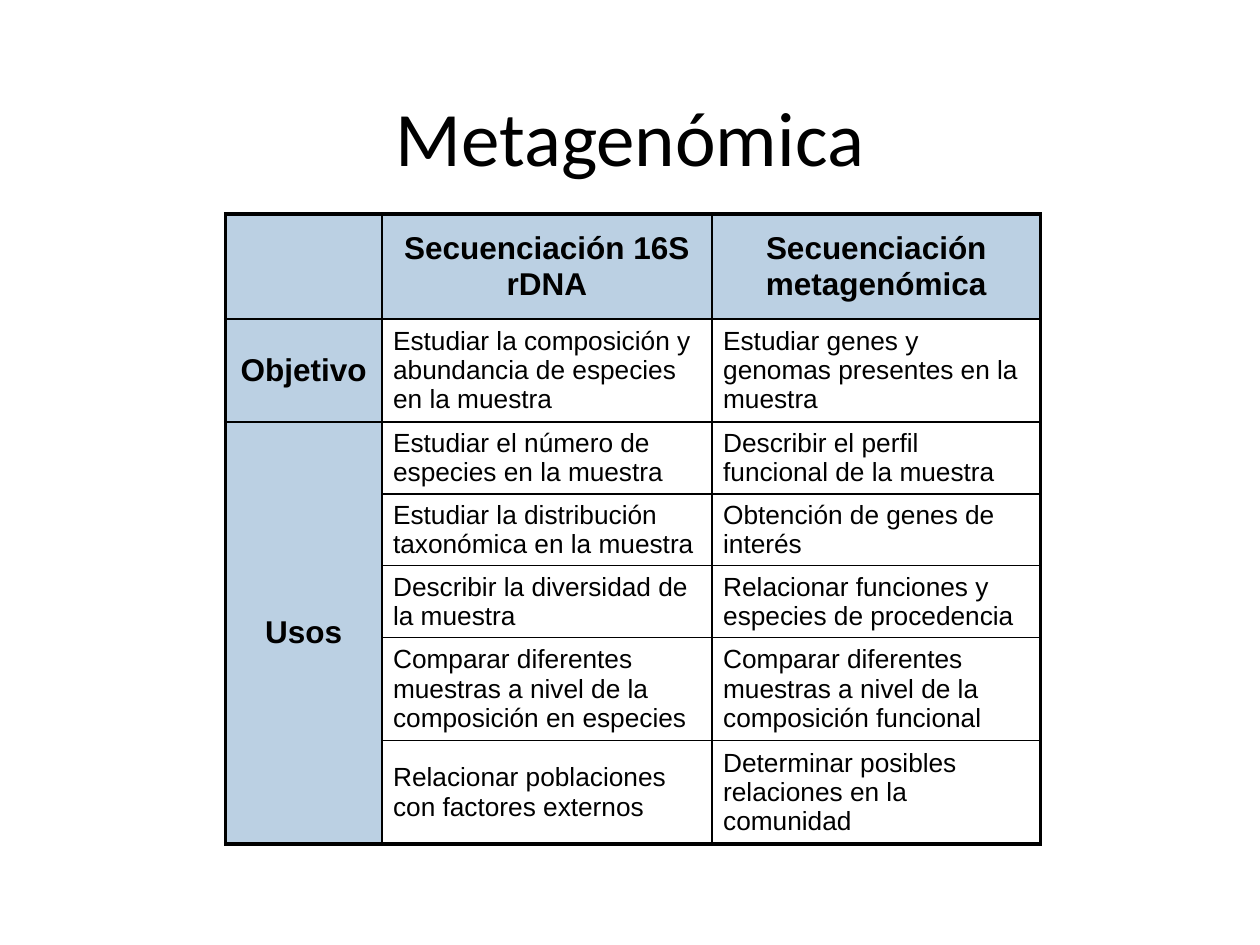
from lxml import etree
from pptx import Presentation
from pptx.dml.color import RGBColor
from pptx.enum.text import MSO_ANCHOR, PP_ALIGN
from pptx.oxml.ns import qn
from pptx.util import Inches, Pt

MIDDLE = MSO_ANCHOR.MIDDLE
CENTER, LEFT = PP_ALIGN.CENTER, PP_ALIGN.LEFT
BLACK, WHITE, BLUE = "000000", "FFFFFF", "BBD0E3"
THIN, THICK = 1, 2.25
COLS = [1.24, 2.62, 2.61]
ROWS = [0.83, 0.82, 0.57, 0.57, 0.57, 0.82, 0.82]
USES = 2  # first row of the merged "Usos" cell
CELLS = [
    ["", "Secuenciación 16S rDNA", "Secuenciación metagenómica"],
    ["Objetivo", "Estudiar la composición y abundancia de especies en la muestra",
     "Estudiar genes y genomas presentes en la muestra"],
    ["Usos", "Estudiar el número de especies en la muestra",
     "Describir el perfil funcional de la muestra"],
    ["", "Estudiar la distribución taxonómica en la muestra",
     "Obtención de genes de interés"],
    ["", "Describir la diversidad de la muestra",
     "Relacionar funciones y especies de procedencia"],
    ["", "Comparar diferentes muestras a nivel de la composición en especies",
     "Comparar diferentes muestras a nivel de la composición funcional"],
    ["", "Relacionar poblaciones con factores externos",
     "Determinar posibles relaciones en la comunidad"],
]


def color(code):
    return RGBColor.from_string(code)


def add_run(para, text, font, size, bold=False):
    run = para.add_run()
    run.text = text
    run.font.name = font
    run.font.size = Pt(size)
    run.font.bold = bold
    run.font.color.rgb = color(BLACK)


def set_edges(cell, widths):
    """Draw the borders, given as a dict of side letter to points."""
    props = cell._tc.get_or_add_tcPr()
    for place, side in enumerate("LRTB"):
        line = etree.Element(qn("a:ln" + side), w=str(Pt(widths[side])))
        fill = etree.SubElement(line, qn("a:solidFill"))
        etree.SubElement(fill, qn("a:srgbClr"), val=BLACK)
        props.insert(place, line)


def add_title(slide, left, top, width, height):
    title = slide.shapes.title
    title.left, title.top = Inches(left), Inches(top)
    title.width, title.height = Inches(width), Inches(height)
    frame = title.text_frame
    frame.vertical_anchor = MIDDLE
    para = frame.paragraphs[0]
    para.alignment = CENTER
    add_run(para, "Metagenómica", "Calibri", 44)


def fill_cell(cell, text, head):
    cell.fill.solid()
    cell.fill.fore_color.rgb = color(BLUE if head else WHITE)
    cell.vertical_anchor = MIDDLE
    cell.margin_left = cell.margin_right = Inches(0.09)
    cell.margin_top = cell.margin_bottom = Inches(0.05)
    para = cell.text_frame.paragraphs[0]
    para.alignment = CENTER if head else LEFT
    if text:
        add_run(para, text, "Arial", 18 if head else 15, head)


def add_grid(slide, left, top, width, height):
    frame = slide.shapes.add_table(len(ROWS), len(COLS), Inches(left),
                                   Inches(top), Inches(width), Inches(height))
    table = frame.table
    table.first_row = table.horz_banding = False
    for col, size in zip(table.columns, COLS):
        col.width = Inches(size)
    for row, size in zip(table.rows, ROWS):
        row.height = Inches(size)
    last_row, last_col = len(ROWS) - 1, len(COLS) - 1
    table.cell(USES, 0).merge(table.cell(last_row, 0))
    for r, texts in enumerate(CELLS):
        for c, text in enumerate(texts):
            cell = table.cell(r, c)
            fill_cell(cell, text, r == 0 or c == 0)
            end = r + cell.span_height - 1 if cell.is_merge_origin else r
            outer = {"L": c == 0, "R": c == last_col,
                     "T": r == 0, "B": end == last_row}
            set_edges(cell, {side: THICK if edge else THIN
                             for side, edge in outer.items()})


def main():
    deck = Presentation()
    deck.slide_width, deck.slide_height = Inches(10), Inches(7.5)
    slide = deck.slides.add_slide(deck.slide_layouts[5])
    add_grid(slide, 1.79, 1.7, sum(COLS), sum(ROWS))
    add_title(slide, 0.5, 0.45, 9, 1.25)
    deck.save("out.pptx")


if __name__ == "__main__":
    main()
